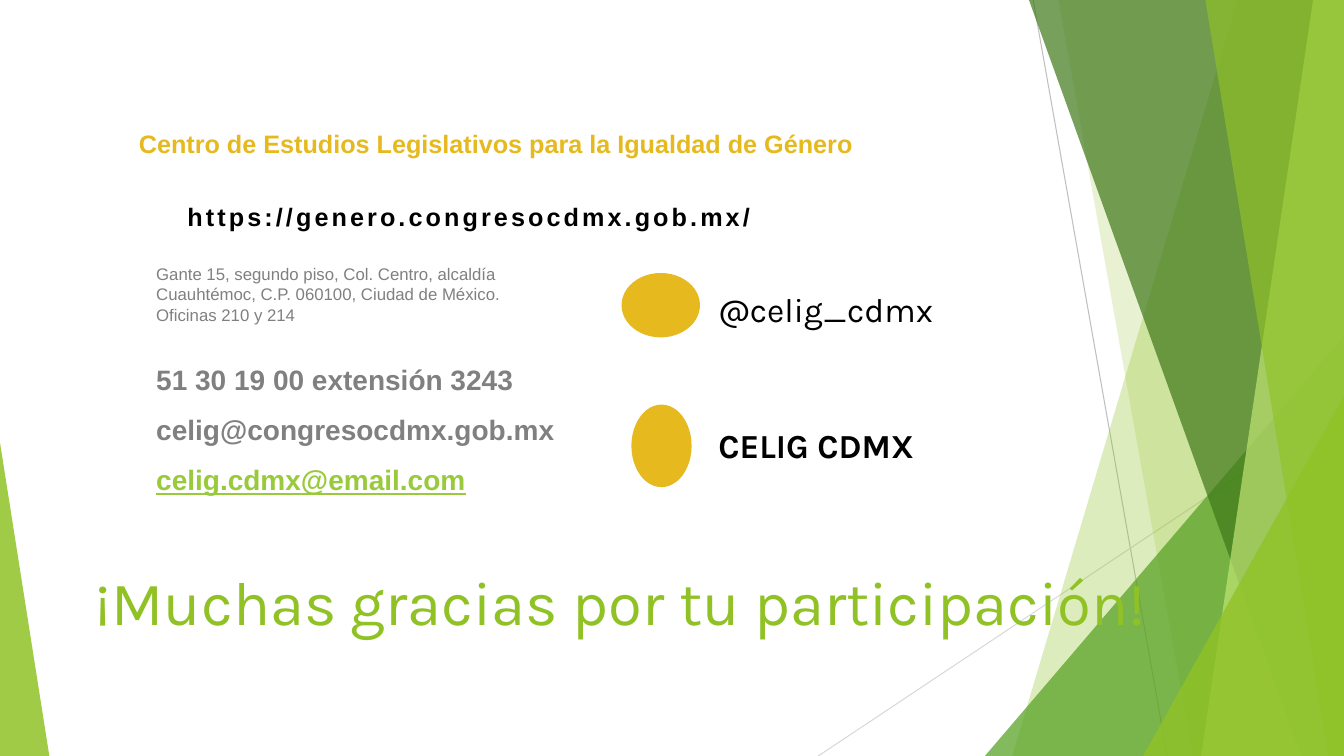
from pptx import Presentation
from pptx.dml.color import RGBColor
from pptx.enum.shapes import MSO_CONNECTOR as CONN, MSO_SHAPE as SHAPE
from pptx.enum.text import MSO_ANCHOR as ANCHOR, PP_ALIGN as ALIGN
from pptx.oxml.xmlchemy import OxmlElement as Element
from pptx.util import Pt

W, H = 960, 540
COLORS = {
    "green": "90C226", "mid": "54A021", "dark": "3F7819", "pale": "C0E474",
    "gold": "E6B91E", "gray": "808080", "black": "000000", "link": "99CA3C",
    "line_a": "BFBFBF", "line_b": "D9D9D9",
}

RULES = [((738, 0), (833.75, H), "line_a"), ((W, 290), (584.5, H), "line_b")]
FACETS = [
    ("band", 884, 723, "green", 30),
    ("band", 756, 852, "green", 20),
    ("triangle", (703.5, 240, 256.5), 1, "mid", 72),
    ("band", 735, 929.5, "dark", 70),
    ("band", 938, 858, "pale", 70),
    ("band", 861, 949, "green", 65),
    ("triangle", (816.5, 283, 143.5), 1, "green", 80),
    ("triangle", (0, 316, 35.25), 0, "green", 85),
]

TITLE = "¡Muchas gracias por tu participación!"
CENTER = "Centro de Estudios Legislativos para la Igualdad de Género"
URL = "https://genero.congresocdmx.gob.mx/"
ADDRESS = [
    "Gante 15, segundo piso, Col. Centro, alcaldía Cuauhtémoc, C.P. 060100, Ciudad de México.",
    "Oficinas 210 y 214",
]
CONTACTS = [
    ("51 30 19 00 extensión 3243", {"before": 15}),
    ("celig@congresocdmx.gob.mx", {}),
    ("celig.cdmx@email.com", {"color": "link", "underline": True}),
]
SOCIAL = [
    ("@celig_cdmx", False, 203, (444, 195, 56, 46)),
    ("CELIG CDMX", True, 300, (451, 289, 43, 59)),
]


def rgb(name):
    return RGBColor.from_string(COLORS[name])


def paint(sp, color, opacity=100):
    sp.shadow.inherit = False
    sp.fill.solid()
    sp.fill.fore_color.rgb = rgb(color)
    sp.line.fill.background()
    if opacity < 100:
        alpha = Element("a:alpha")
        alpha.set("val", str(opacity * 1000))
        sp.fill._xPr.find(".//{*}srgbClr").append(alpha)


def add_text(tf, text, size=18, font="Arial", color="black", bold=False, underline=None,
             align=ALIGN.LEFT, spacing=1.0, before=0, tracking=0, first=True):
    p = tf.paragraphs[0] if first else tf.add_paragraph()
    p.alignment, p.line_spacing = align, spacing
    p.space_before = Pt(before)
    r = p.add_run()
    r.text = text
    r.font.name, r.font.size = font, Pt(size)
    r.font.bold, r.font.underline = bold, underline
    r.font.color.rgb = rgb(color)
    if tracking:
        r.font._element.set("spc", str(tracking))
    return p


def add_box(slide, x, y, w, h):
    tf = slide.shapes.add_textbox(Pt(x), Pt(y), Pt(w), Pt(h)).text_frame
    tf.word_wrap = True
    return tf


def place(sp, x, y, w, h):
    sp.left, sp.top, sp.width, sp.height = Pt(x), Pt(y), Pt(w), Pt(h)
    sp.text_frame.vertical_anchor = ANCHOR.MIDDLE
    sp.text_frame.word_wrap = True
    return sp.text_frame


def draw_background(slide):
    shapes = slide.shapes
    for start, end, color in RULES:
        line = shapes.add_connector(CONN.STRAIGHT, *map(Pt, start + end))
        line.line.color.rgb = rgb(color)
        line.line.width = Pt(0.75)
        line._element.spPr.append(Element("a:effectLst"))
    for kind, a, b, color, opacity in FACETS:
        if kind == "band":
            path = shapes.build_freeform(Pt(a), 0)
            path.add_line_segments([(Pt(x), Pt(y)) for x, y in ((W, 0), (W, H), (b, H))])
            sp = path.convert_to_shape()
        else:
            x, y, w = a
            sp = shapes.add_shape(SHAPE.ISOSCELES_TRIANGLE, Pt(x), Pt(y), Pt(w), Pt(H - y))
            sp.adjustments[0] = b
        paint(sp, color, opacity)


def main():
    prs = Presentation()
    prs.slide_width, prs.slide_height = Pt(W), Pt(H)
    slide = prs.slides.add_slide(prs.slide_layouts[1])
    draw_background(slide)

    title, body = slide.shapes.title, slide.placeholders[1]
    for sp in (title, body):
        slide.shapes.element.append(sp.element)
    add_text(place(title, 60.5, 348, 771, 162.5), TITLE, size=44, font="Karla", color="green")
    p = add_text(place(body, 92, 57, 677, 91), CENTER, color="gold", bold=True)
    pPr = p._p.get_or_add_pPr()
    pPr.set("marL", "0")
    pPr.set("indent", "0")
    pPr.append(Element("a:buNone"))

    tf = add_box(slide, 104.5, 185, 312.5, 193.5)
    for i, line in enumerate(ADDRESS):
        add_text(tf, line, size=12, color="gray", first=i == 0)
    for line, style in CONTACTS:
        add_text(tf, line, **{"size": 20, "color": "gray", "bold": True,
                              "spacing": 1.5, "first": False, **style})

    add_text(add_box(slide, 92, 129.5, 486, 36), URL, bold=True, align=ALIGN.CENTER,
             spacing=1.5, tracking=220)

    for name, bold, y, icon in SOCIAL:
        paint(slide.shapes.add_shape(SHAPE.OVAL, *map(Pt, icon)), "gold")
        add_text(add_box(slide, 506, y, 211, 36), name, size=24, font="Karla", bold=bold)

    prs.save("out.pptx")


if __name__ == "__main__":
    main()
